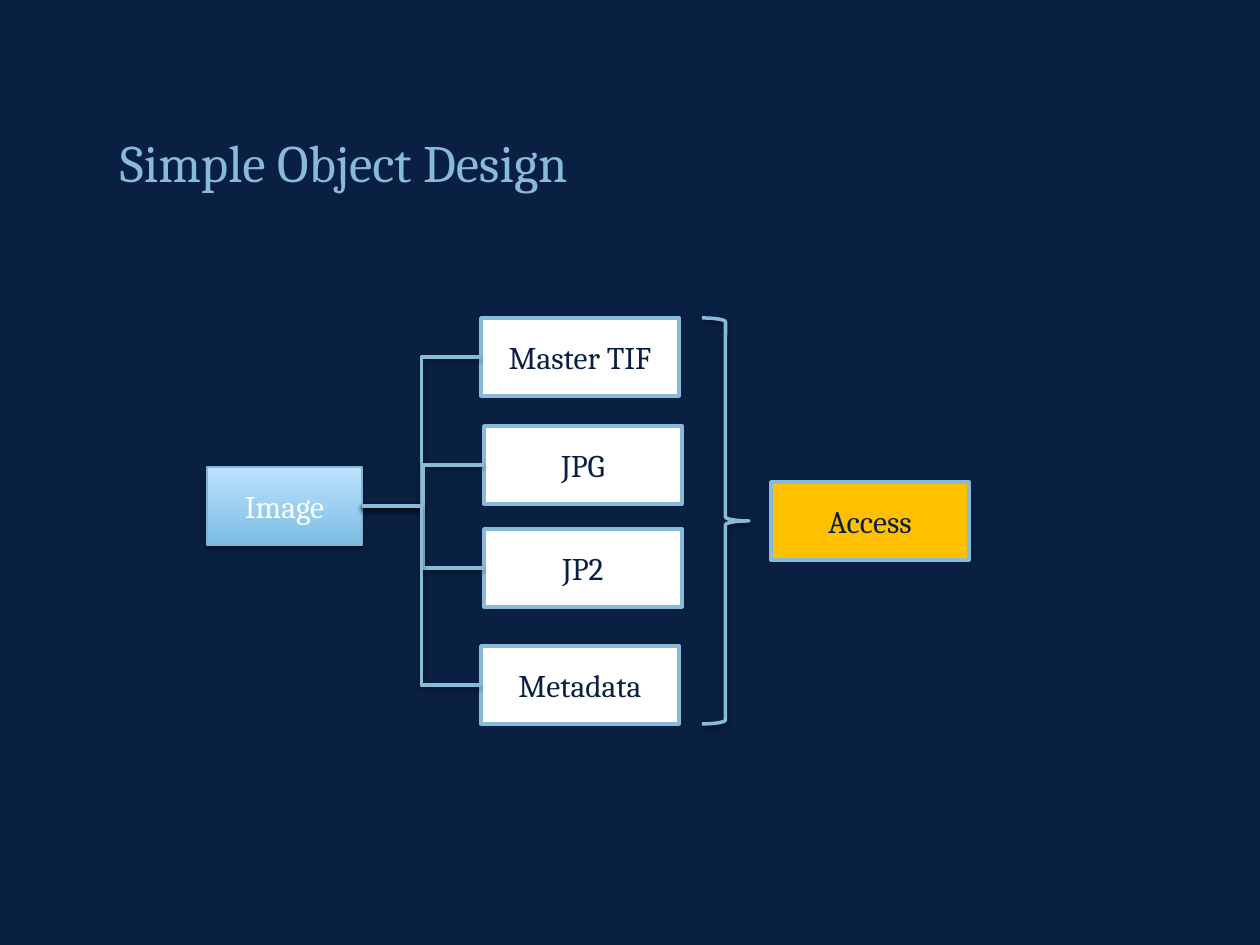
from lxml.etree import SubElement
from pptx import Presentation
from pptx.dml.color import RGBColor
from pptx.enum.shapes import MSO_CONNECTOR, MSO_SHAPE
from pptx.enum.text import MSO_ANCHOR, PP_ALIGN
from pptx.oxml.ns import qn
from pptx.util import Emu, Pt

NAVY = RGBColor(0x0A, 0x20, 0x43)
SKY = RGBColor(0x89, 0xBA, 0xD7)
EDGE = RGBColor(0x84, 0xB6, 0xD4)
GRADIENT = (RGBColor(0x7D, 0xBD, 0xE3), RGBColor(0xBC, 0xE3, 0xFF))
GOLD = RGBColor(0xFF, 0xC0, 0x00)
WHITE = RGBColor(0xFF, 0xFF, 0xFF)
FONT = "Cambria"
LEFT_SITE, RIGHT_SITE = 1, 3
BOX_W, BOX_H = 198, 78
# Name, left and top inside the diagram
FILES = [("Master TIF", 274, 0), ("JPG", 277, 108),
         ("JP2", 277, 211), ("Metadata", 274, 328)]


def px(n):
    return Emu(round(n * 914400 / 126))


def set_font(p, size, color):
    p.font.name, p.font.size, p.font.color.rgb = FONT, Pt(size), color


def set_line(sp, color=SKY, width=2):
    sp.line.color.rgb = color
    sp.line.width = Pt(width)


def add_shadow(sp, alpha, dist):
    """Give a shape or connector a soft black shadow straight below it."""
    spPr = sp._element.spPr
    effects = spPr.find(qn("a:effectLst"))
    if effects is None:
        effects = SubElement(spPr, qn("a:effectLst"))
    shadow = SubElement(effects, qn("a:outerShdw"), blurRad=str(Pt(3.1)),
                        dist=str(Pt(dist)), dir="5400000", rotWithShape="0")
    color = SubElement(shadow, qn("a:srgbClr"), val="000000")
    SubElement(color, qn("a:alpha"), val=str(alpha * 1000))


def add_title(s, x, y, w, h):
    tf = s.shapes.add_textbox(px(x), px(y), px(w), px(h)).text_frame
    tf.word_wrap = True
    tf.margin_left = px(9)
    p = tf.paragraphs[0]
    p.text = "Simple Object Design"
    p.line_spacing = 1.2
    set_font(p, 30, SKY)


def add_box(s, text, x, y, w=BOX_W, fill=WHITE, color=NAVY):
    sp = s.shapes.add_shape(MSO_SHAPE.RECTANGLE, px(x), px(y), px(w), px(BOX_H))
    sp.shadow.inherit = False
    sp.fill.solid()
    sp.fill.fore_color.rgb = fill
    set_line(sp)
    tf = sp.text_frame
    tf.vertical_anchor = MSO_ANCHOR.MIDDLE
    p = tf.paragraphs[0]
    p.text = text
    p.alignment = PP_ALIGN.CENTER
    set_font(p, 18, color)
    return sp


def add_source(s, x, y):
    sp = add_box(s, "Image", x, y, w=155, color=WHITE)
    sp.fill.gradient()
    sp.fill.gradient_angle = 90
    for stop, color in zip(sp.fill.gradient_stops, GRADIENT):
        stop.color.rgb = color
    set_line(sp, EDGE, 0.75)
    add_shadow(sp, 35, 1.8)
    return sp


def add_link(s, source, target):
    link = s.shapes.add_connector(MSO_CONNECTOR.ELBOW, 0, 0, 0, 0)
    link.begin_connect(source, RIGHT_SITE)
    link.end_connect(target, LEFT_SITE)
    set_line(link)
    add_shadow(link, 38, 1.6)


def add_brace(s, x, y, w, h):
    sp = s.shapes.add_shape(MSO_SHAPE.RIGHT_BRACE, px(x), px(y), px(w), px(h))
    sp.shadow.inherit = False
    sp.fill.background()
    set_line(sp)
    add_shadow(sp, 38, 1.6)


def add_diagram(s, x, y):
    source = add_source(s, x, y + 149)
    for name, dx, dy in FILES:
        add_link(s, source, add_box(s, name, x + dx, y + dy))
    add_box(s, "Access", x + 564, y + 164, fill=GOLD)
    add_brace(s, x + 495, y, 47, FILES[-1][2] + BOX_H)


def main():
    prs = Presentation()
    prs.slide_width, prs.slide_height = px(1260), px(945)
    s = prs.slides.add_slide(prs.slide_layouts[6])
    s.background.fill.solid()
    s.background.fill.fore_color.rgb = NAVY
    add_title(s, 111, 111, 1040, 89)
    add_diagram(s, 207, 318)
    prs.save("out.pptx")


if __name__ == "__main__":
    main()
